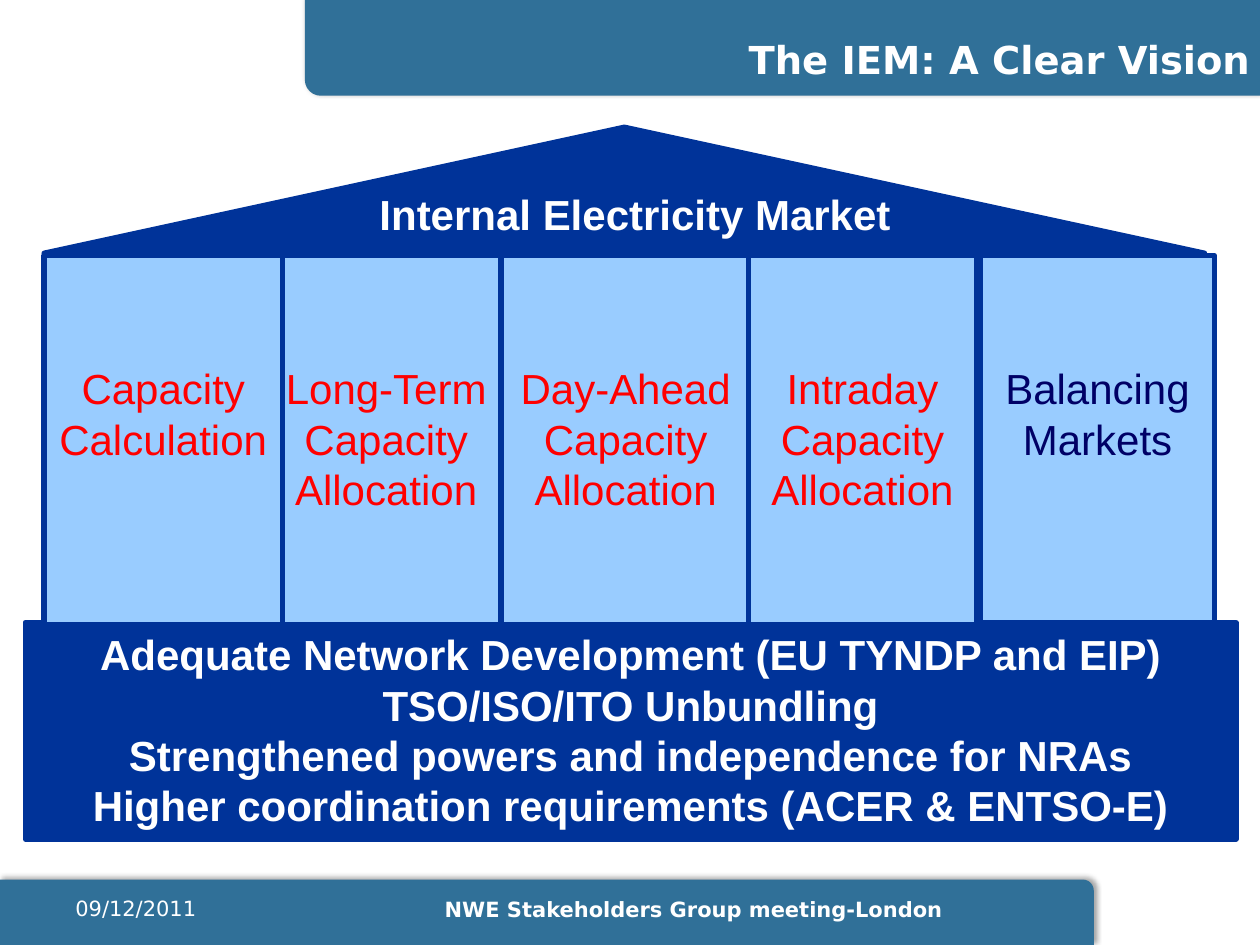
import pptx
import pptx.dml.color
import pptx.enum.shapes
import pptx.enum.text
import pptx.util
import lxml.etree
import pptx.oxml.ns

Pt = pptx.util.Pt
SHAPE = pptx.enum.shapes.MSO_SHAPE
ALIGN = pptx.enum.text.PP_ALIGN
ANCHOR = pptx.enum.text.MSO_ANCHOR

WHITE, TEAL, NAVY, SKY = "FFFFFF", "307098", "003399", "99CCFF"
RED, INK = "FF0000", "000066"
LINE_PITCH = 28.8


def colour(value):
    return pptx.dml.color.RGBColor.from_string(value)


def add_shadow(properties, blur, distance, direction, opacity):
    qn = pptx.oxml.ns.qn
    for old in properties.findall(qn("a:effectLst")):
        properties.remove(old)
    effects = lxml.etree.Element(qn("a:effectLst"))
    shadow = lxml.etree.SubElement(
        effects, qn("a:outerShdw"), blurRad=str(Pt(blur)), dist=str(Pt(distance)),
        dir=str(direction * 60000), algn="ctr", rotWithShape="0")
    black = lxml.etree.SubElement(shadow, qn("a:srgbClr"), val="000000")
    lxml.etree.SubElement(black, qn("a:alpha"), val=str(opacity * 1000))
    fill = properties.find(qn("a:solidFill"))
    line = properties.find(qn("a:ln"))
    (fill if line is None else line).addnext(effects)


class SlideStyle:
    def __init__(self, page):
        self.page = page

    def shape(self, kind, area, fill, line=None):
        shape = self.page.shapes.add_shape(kind, *map(Pt, area))
        shape.shadow.inherit = False
        shape.fill.solid()
        shape.fill.fore_color.rgb = colour(fill)
        if line:
            shape.line.color.rgb = colour(line)
            shape.line.width = Pt(3)
        else:
            shape.line.fill.background()
        return shape

    def banner(self, area, rotation=0):
        shape = self.shape(SHAPE.ROUND_1_RECTANGLE, area, TEAL)
        shape.rotation = rotation
        add_shadow(shape._element.spPr, 3.1, 1.8, 306, 35)

    def set_lines(self, box, lines, size=24, font="Arial", ink=WHITE, bold=False,
                  align=ALIGN.CENTER, pitch=LINE_PITCH, top=3.6, anchor=ANCHOR.TOP):
        frame = box.text_frame
        frame.word_wrap = True
        frame.vertical_anchor = anchor
        frame.margin_top = Pt(top)
        frame.text = "\n".join(lines)
        for para in frame.paragraphs:
            para.alignment = align
            if pitch:
                para.line_spacing = Pt(pitch)
            para.font.size = Pt(size)
            para.font.name = font
            para.font.bold = bold
            para.font.color.rgb = colour(ink)

    def text(self, area, line, **look):
        box = self.page.shapes.add_textbox(*map(Pt, area))
        self.set_lines(box, [line], **look)
        return box

    def title(self, area, line):
        box = self.text(area, line, size=22, font="DejaVu Sans", bold=True,
                        align=ALIGN.RIGHT, pitch=None, top=31, anchor=ANCHOR.MIDDLE)
        span = box.text_frame.paragraphs[0].runs[0]
        span.font.color.rgb = colour(WHITE)
        add_shadow(span._r.get_or_add_rPr(), 3, 2, 45, 45)

    def footer(self, area, line, bold=False):
        self.text(area, line, size=12, font="DejaVu Sans", bold=bold,
                  align=ALIGN.LEFT, pitch=None)

    def pillar(self, left, width, line, ink=RED):
        box = self.shape(SHAPE.RECTANGLE, (left, 146.2, width, 211), SKY, NAVY)
        self.set_lines(box, [line], ink=ink, top=3.6 + 2 * LINE_PITCH)

    def roof(self, area, label_area, line):
        self.shape(SHAPE.ISOSCELES_TRIANGLE, area, NAVY, NAVY)
        self.text(label_area, line, bold=True)

    def foundation(self, area, lines):
        box = self.shape(SHAPE.RECTANGLE, area, NAVY, NAVY)
        self.set_lines(box, lines, bold=True)


def main():
    deck = pptx.Presentation()
    deck.slide_width, deck.slide_height = Pt(720), Pt(540)
    style = SlideStyle(deck.slides.add_slide(deck.slide_layouts[6]))

    style.banner((0, 502.6, 625, 37.4))
    style.banner((174.2, 0, 545.8, 54.7), rotation=180)
    style.title((174.2, -13.7, 547.2, 67.7), "The IEM: A Clear Vision")

    style.pillar(560.2, 133.9, "Balancing Markets", INK)
    style.roof((25.2, 72.7, 663.1, 72), (172.8, 104.4, 380.2, 36.7),
               "Internal Electricity Market")
    style.foundation((14.4, 355.7, 691.9, 123.8), [
        "Adequate Network Development (EU TYNDP and EIP)",
        "TSO/ISO/ITO Unbundling",
        "Strengthened powers and independence for NRAs",
        "Higher coordination requirements (ACER & ENTSO-E)",
    ])
    for left, width, line in (
        (155.5, 130.3, "Long-Term Capacity Allocation"),
        (286.6, 141.8, "Day-Ahead Capacity Allocation"),
        (25.2, 136.1, "Capacity Calculation"),
        (427.7, 130.3, "Intraday Capacity Allocation"),
    ):
        style.pillar(left, width, line)

    style.footer((36, 508.3, 167.8, 28.8), "09/12/2011")
    style.footer((247, 509, 329.8, 28.8), "NWE Stakeholders Group meeting-London", bold=True)
    deck.save("out.pptx")


if __name__ == "__main__":
    main()
